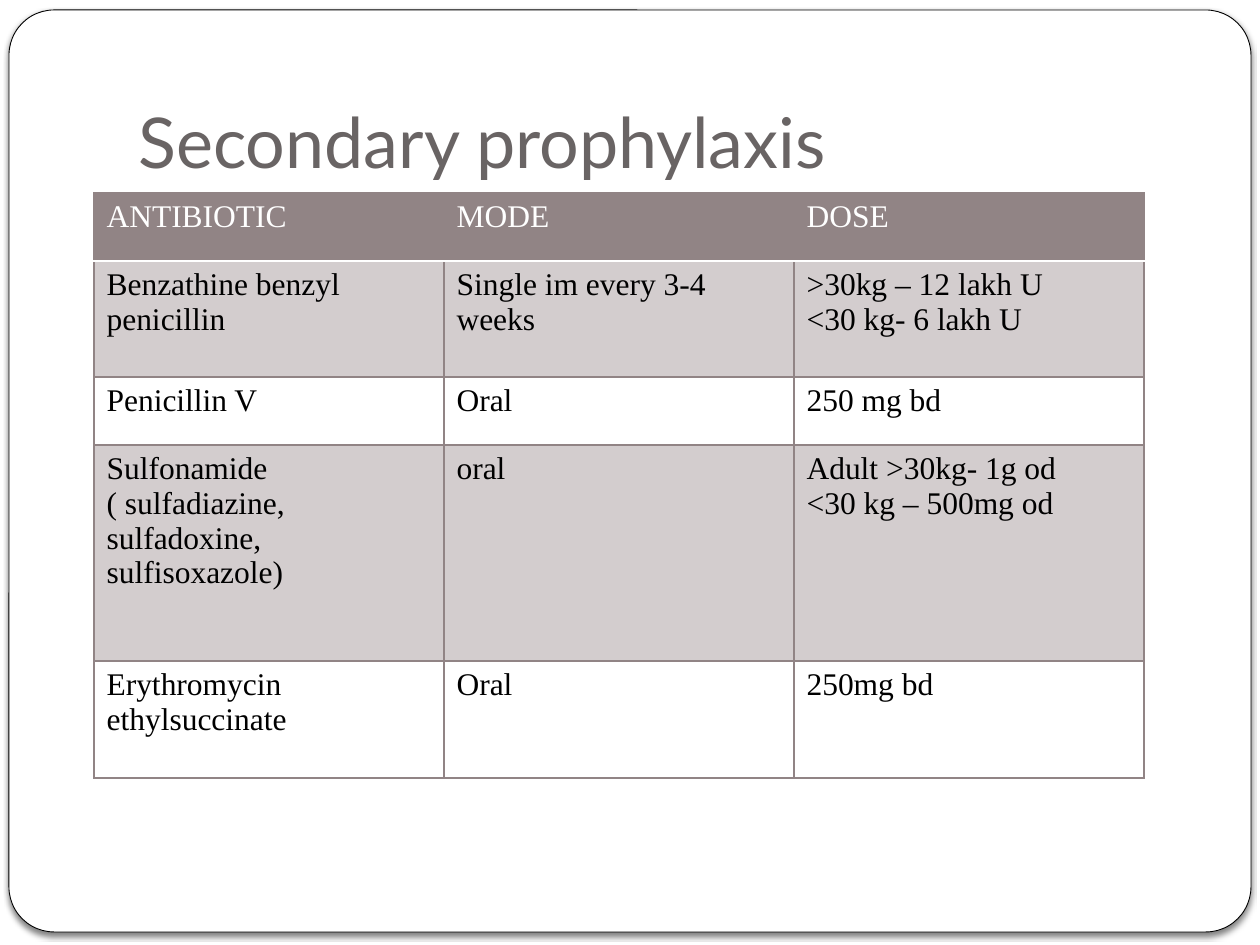
"""Build the secondary prophylaxis slide with its antibiotic table."""
import dataclasses
import typing

import lxml.etree
import pptx
import pptx.dml.color
import pptx.enum.shapes
import pptx.enum.text
import pptx.oxml.ns
import pptx.util

PX = 914400 / 126
COLORS = {"white": "FFFFFF", "black": "000000", "title": "696464", "mauve": "918485"}
COLUMN_WIDTH = 350


@dataclasses.dataclass(frozen=True)
class Row:
    height: int
    cells: tuple[str, str, str]


ROWS = (
    Row(68, ("ANTIBIOTIC", "MODE", "DOSE")),
    Row(116, ("Benzathine benzyl penicillin", "Single im every 3-4 weeks",
              ">30kg – 12 lakh U\n<30 kg- 6 lakh U")),
    Row(68, ("Penicillin V", "Oral", "250 mg bd")),
    Row(216, ("Sulfonamide ( sulfadiazine, sulfadoxine, sulfisoxazole)", "oral",
              "Adult >30kg- 1g od\n<30 kg – 500mg od")),
    Row(117, ("Erythromycin ethylsuccinate", "Oral", "250mg bd")),
)


def px(n: int) -> pptx.util.Emu:
    return pptx.util.Emu(round(n * PX))


def rgb(name: str) -> pptx.dml.color.RGBColor:
    return pptx.dml.color.RGBColor.from_string(COLORS[name])


def sub(parent: typing.Any, tag: str, **attrs: typing.Any) -> typing.Any:
    return lxml.etree.SubElement(parent, pptx.oxml.ns.qn(tag),
                                 {k: str(v) for k, v in attrs.items()})


def write(tf: typing.Any, text: str, *, font: str, size: int, color: str) -> None:
    tf.text = text
    for p in tf.paragraphs:
        p.alignment = pptx.enum.text.PP_ALIGN.LEFT
        for r in p.runs:
            r.font.name = font
            r.font.size = pptx.util.Pt(size)
            r.font.bold = False
            r.font.color.rgb = rgb(color)


def add_frame(s: typing.Any) -> typing.Any:
    sp = s.shapes.add_shape(pptx.enum.shapes.MSO_SHAPE.ROUNDED_RECTANGLE,
                            px(9), px(10), px(1242), px(922))
    sp.adjustments[0] = 0.049
    sp.fill.solid()
    sp.fill.fore_color.rgb = rgb("white")
    sp.line.color.rgb = rgb("black")
    sp.line.width = pptx.util.Pt(0.5)
    sp.shadow.inherit = False
    effects = sp.element.spPr.find(pptx.oxml.ns.qn("a:effectLst"))
    shadow = sub(effects, "a:outerShdw", blurRad=pptx.util.Pt(3), dist=pptx.util.Pt(2),
                 dir=90 * 60000, algn="ctr", rotWithShape=0)
    sub(sub(shadow, "a:srgbClr", val=COLORS["black"]), "a:alpha", val=50000)
    return sp


def set_borders(cell: typing.Any, top: str, bottom: str) -> None:
    tcPr = cell._tc.get_or_add_tcPr()
    for side, color in (("L", "mauve"), ("R", "mauve"), ("T", top), ("B", bottom)):
        ln = sub(tcPr, f"a:ln{side}", w=pptx.util.Pt(0.96))
        sub(sub(ln, "a:solidFill"), "a:srgbClr", val=COLORS[color])


def fill_cell(cell: typing.Any, row: int) -> None:
    if row and row % 2 == 0:
        cell.fill.background()
        return
    cell.fill.solid()
    cell.fill.fore_color.rgb = rgb("mauve")
    if row:
        clr = next(cell._tc.tcPr.iterchildren(pptx.oxml.ns.qn("a:solidFill")))[0]
        sub(clr, "a:alpha", val=40000)


def add_table(s: typing.Any, rows: tuple[Row, ...]) -> None:
    n = len(rows[0].cells)
    table = s.shapes.add_table(len(rows), n, px(94), px(193), px(n * COLUMN_WIDTH),
                               px(sum(row.height for row in rows))).table
    for column in table.columns:
        column.width = px(COLUMN_WIDTH)
    for i, row in enumerate(rows):
        table.rows[i].height = px(row.height)
        for j, text in enumerate(row.cells):
            cell = table.cell(i, j)
            write(cell.text_frame, text, font="Times New Roman", size=18,
                  color="black" if i else "white")
            set_borders(cell, top="white" if i == 1 else "mauve",
                        bottom="mauve" if i else "white")
            fill_cell(cell, i)


def main() -> None:
    prs = pptx.Presentation()
    prs.slide_width, prs.slide_height = px(1260), px(945)
    s = prs.slides.add_slide(prs.slide_layouts[5])
    title = s.shapes.title
    title.left, title.top, title.width, title.height = px(126), px(38), px(1071), px(157)
    tf = title.text_frame
    tf.vertical_anchor = pptx.enum.text.MSO_ANCHOR.BOTTOM
    tf.margin_bottom = pptx.util.Inches(0.1)
    write(tf, "Secondary prophylaxis", font="Lato", size=40, color="title")
    title.element.addprevious(add_frame(s).element)
    add_table(s, ROWS)
    prs.save("out.pptx")


if __name__ == "__main__":
    main()
